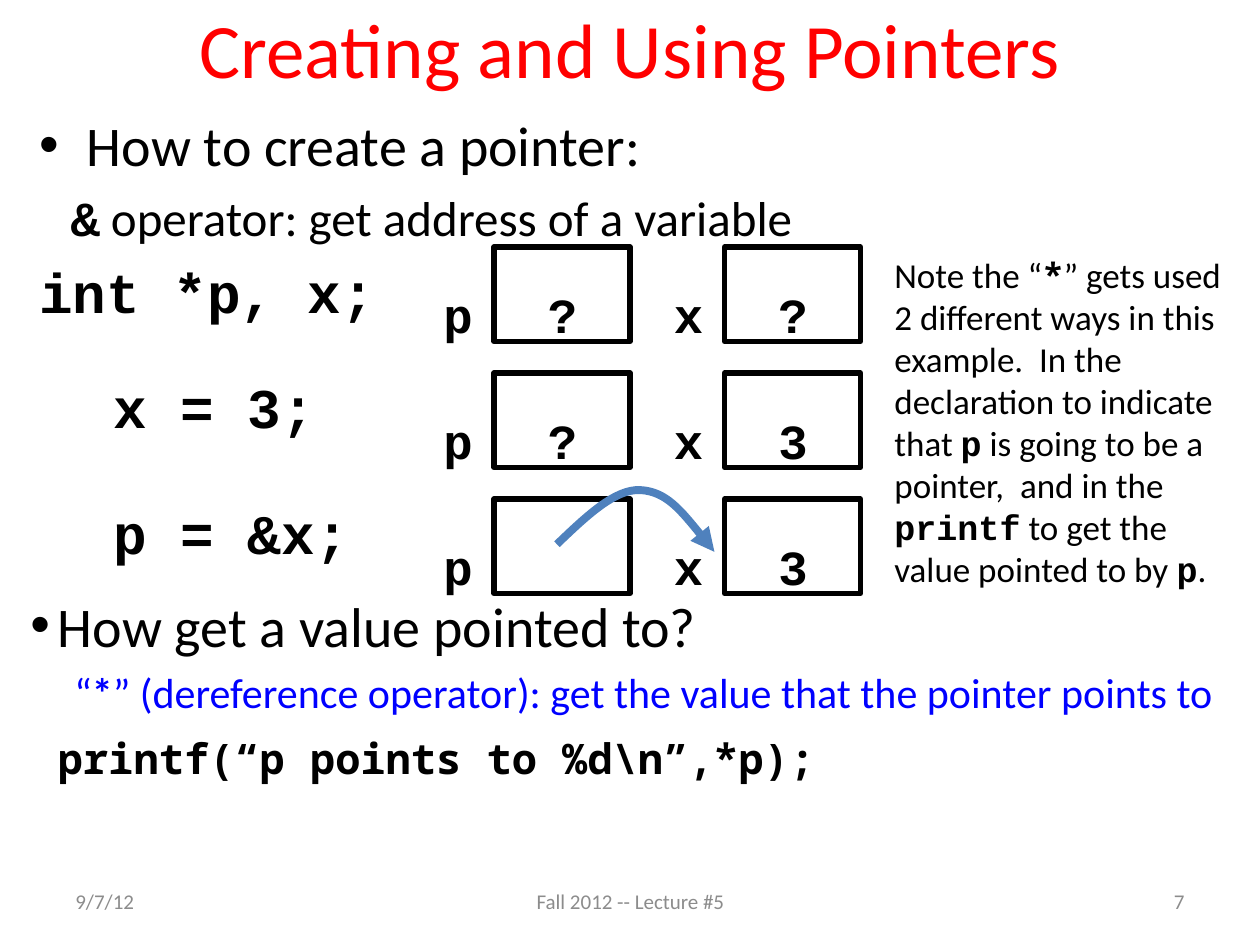
from dataclasses import dataclass
from typing import Any, Optional

from lxml.etree import SubElement as Sub
from pptx import Presentation
from pptx.dml.color import RGBColor as Rgb
from pptx.enum.shapes import MSO_SHAPE as Shape
from pptx.enum.text import MSO_ANCHOR as Anchor, MSO_AUTO_SIZE as Fit, PP_ALIGN as Align
from pptx.oxml.ns import qn
from pptx.util import Inches, Pt

HUES = {"black": "000000", "red": "FF0000", "blue": "0000FF", "gray": "8C8C8C", "arc": "4F81BD"}
SANS, CODE, MONO = "Calibri", "Courier New", "Noto Sans Mono"
TIGHT = (0.07, 0.03, 0.07, 0.03)


@dataclass
class Run:
    text: str
    font: str = SANS
    bold: bool = False


@dataclass
class Para:
    runs: list[Run]
    size: float
    hue: str = "black"
    left: float = 0
    first: float = 0
    before: int = 0
    line: Optional[float] = None
    mark: bool = False
    level: int = 0
    align: Any = Align.LEFT


@dataclass
class Row:
    top: float
    code: str
    p: str
    x: str


def rgb(hue: str) -> Rgb:
    return Rgb.from_string(HUES[hue])


def write(frame: Any, paras: list[Para]) -> None:
    for i, spec in enumerate(paras):
        para = frame.paragraphs[0] if i == 0 else frame.add_paragraph()
        para.level = spec.level
        para.alignment = spec.align
        if spec.line:
            para.line_spacing = spec.line
        props = para._p.get_or_add_pPr()
        props.set("marL", str(Inches(spec.left)))
        props.set("indent", str(Inches(spec.first)))
        gap = Sub(props, qn("a:spcBef"))
        Sub(gap, qn("a:spcPct")).set("val", str(spec.before * 1000))
        if spec.mark:
            Sub(props, qn("a:buFont")).set("typeface", "Arial")
            Sub(props, qn("a:buChar")).set("char", "•")
        else:
            Sub(props, qn("a:buNone"))
        for part in spec.runs:
            run = para.add_run()
            run.text = part.text
            font = run.font
            font.name, font.size, font.bold = part.font, Pt(spec.size), part.bold
            font.color.rgb = rgb(spec.hue)


def place(shape: Any, left: float, top: float, width: float, height: float) -> None:
    shape.left, shape.top = Inches(left), Inches(top)
    shape.width, shape.height = Inches(width), Inches(height)


def add_text(shapes: Any, box: tuple, paras: list[Para], wrap: bool = True,
             pad: tuple = (0.1, 0.05, 0.1, 0.05), grow: bool = True) -> None:
    frame = shapes.add_textbox(*map(Inches, box)).text_frame
    frame.word_wrap = wrap
    frame.auto_size = Fit.SHAPE_TO_FIT_TEXT if grow else Fit.NONE
    frame.vertical_anchor = Anchor.TOP if grow else Anchor.MIDDLE
    (frame.margin_left, frame.margin_top,
     frame.margin_right, frame.margin_bottom) = map(Inches, pad)
    write(frame, paras)


def add_cell(shapes: Any, left: float, top: float, name: str, value: str) -> None:
    cell = shapes.add_shape(Shape.RECTANGLE, *map(Inches, (left, top, 1.08, 0.75)))
    cell.shadow.inherit = False
    cell.fill.background()
    cell.line.color.rgb = rgb("black")
    cell.line.width = Pt(3)
    for shift, text in ((-0.5, name), (0.33, value)):
        if text:
            add_text(shapes, (left + shift, top + 0.25, 0.43, 0.57),
                     [Para([Run(text, CODE, True)], 28)], wrap=False)


def add_arc(shapes: Any, points: list[tuple[float, float]]) -> None:
    start, *rest = [(Inches(x), Inches(y)) for x, y in points]
    pen = shapes.build_freeform(*start)
    pen.add_line_segments(rest, close=False)
    arc = pen.convert_to_shape()
    arc.shadow.inherit = False
    arc.fill.background()
    arc.line.color.rgb = rgb("arc")
    arc.line.width = Pt(4.5)
    Sub(arc.line._get_or_add_ln(), qn("a:tailEnd")).set("type", "triangle")
    route = arc._element.find(".//" + qn("a:path"))
    lines = route.findall(qn("a:lnTo"))
    for i in range(0, len(lines), 3):
        curve = Sub(route, qn("a:cubicBezTo"))
        for line in lines[i:i + 3]:
            curve.append(line[0])
            route.remove(line)


def add_row(shapes: Any, row: Row) -> None:
    group = shapes.add_group_shape().shapes
    if row.code:
        add_text(group, (0.83, row.top + 0.09, 2.08, 0.48),
                 [Para([Run(row.code, CODE, True)], 32, left=0.22, first=-0.22,
                       before=65, line=0.75)], pad=TIGHT)
    add_cell(group, 3.92, row.top, "p", row.p)
    add_cell(group, 5.75, row.top, "x", row.x)
    if not row.p:
        add_arc(group, [(4.42, 4.32), (4.65, 4.1), (4.88, 3.88), (5.08, 3.89),
                        (5.29, 3.9), (5.48, 4.14), (5.67, 4.38)])


def main() -> None:
    deck = Presentation()
    deck.slide_width, deck.slide_height = Inches(10), Inches(7.5)
    slide = deck.slides.add_slide(deck.slide_layouts[1])
    shapes = slide.shapes

    title, body = shapes.title, slide.placeholders[1]
    place(title, 0.5, -0.25, 9, 1.25)
    title.text_frame.vertical_anchor = Anchor.MIDDLE
    write(title.text_frame, [Para([Run("Creating and Using Pointers")], 44, "red",
                                  align=Align.CENTER)])

    place(body, 0.21, 0.83, 9.5, 1.79)
    body.text_frame.auto_size = Fit.NONE
    write(body.text_frame, [
        Para([Run("How to create a pointer:")], 32, left=0.38, first=-0.38, before=20, mark=True),
        Para([Run("&", CODE, True), Run(" operator: get address of a variable")], 28,
             left=0.56, first=-0.31, before=20, level=1),
        Para([Run("int *p, x;", CODE, True)], 32, left=0.38, first=-0.38, before=20),
    ])

    for left, width, text, align in (
        (0.5, 2.33, "9/7/12", Align.LEFT),
        (3.42, 3.17, "Fall 2012 -- Lecture #5", Align.CENTER),
        (7.17, 2.33, "7", Align.RIGHT),
    ):
        add_text(shapes, (left, 6.95, width, 0.4),
                 [Para([Run(text)], 12, "gray", align=align)], grow=False)

    for row in (Row(1.96, "", "?", "?"), Row(2.96, "x = 3;", "?", "3"),
                Row(3.96, "p = &x;", "", "3")):
        add_row(shapes, row)

    add_text(shapes, (0.17, 4.79, 9.75, 1.55), [
        Para([Run("How get a value pointed to?")], 32, left=0.22, first=-0.22,
             before=65, line=0.75, mark=True),
        Para([Run("“"), Run("*", bold=True),
              Run("” (dereference operator): get the value that the pointer points to")],
             24, "blue", left=0.56, first=-0.21, before=40, line=0.85, level=1),
        Para([Run("printf(“p points to %d\\n”,*p);", MONO, True)], 24, left=0.22,
             before=65, line=0.75),
    ], pad=TIGHT)

    add_text(shapes, (7, 1.96, 2.92, 2.77), [Para([
        Run("Note the “"), Run("*", MONO, True),
        Run("” gets used 2 different ways in this example.  In the  declaration to indicate that "),
        Run("p", CODE, True), Run(" is going to be a pointer,  and in the "),
        Run("printf", CODE, True), Run(" to get the value pointed to by "),
        Run("p", CODE, True), Run("."),
    ], 20)])

    deck.save("out.pptx")


if __name__ == "__main__":
    main()
